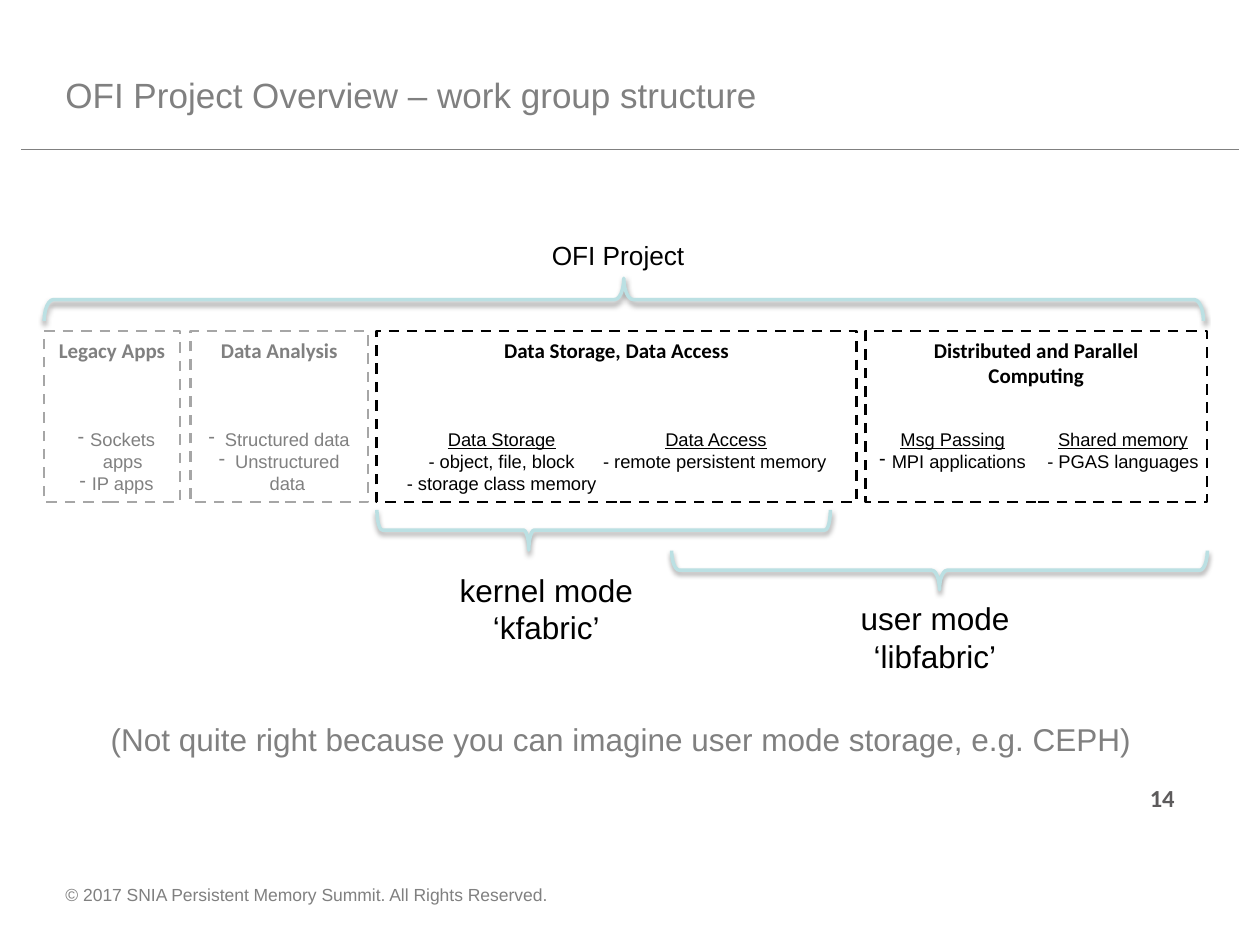
import pptx
import pptx.dml.color
import pptx.enum.dml
import pptx.enum.shapes
import pptx.enum.text
import pptx.oxml
import pptx.oxml.ns
import pptx.util
from lxml import etree

Cm = pptx.util.Cm
Pt = pptx.util.Pt
SHAPE = pptx.enum.shapes.MSO_SHAPE
ANCHOR = pptx.enum.text.MSO_ANCHOR
ALIGN = pptx.enum.text.PP_ALIGN
L, C, R = ALIGN.LEFT, ALIGN.CENTER, ALIGN.RIGHT

COLORS = {"black": "000000", "gray": "808080", "light": "A6A6A6",
          "brace": "BBE0E3", "number": "5D5B5C"}
BOX_TOP, BOX_H = 6.67, 3.45
LIST_TOP = 8.51

# left, width, title lines, text colour, border colour
GROUPS = [
    (0.89, 2.74, ["Legacy Apps"], "gray", "light"),
    (3.84, 3.58, ["Data Analysis"], "gray", "light"),
    (7.59, 9.68, ["Data Storage, Data Access"], "black", "black"),
    (17.45, 6.88, ["Distributed and Parallel", "Computing"], "black", "black"),
]
# left, width, height, colour, heading, items, item alignment, dash indent
# (without an indent the dash is typed in the text)
LISTS = [
    (0.89, 2.92, 1.6, "gray", None, ["Sockets apps", "IP apps"], C, 0.25),
    (3.84, 3.58, 2.06, "gray", None,
     ["Structured data", "Unstructured data"], C, 0.33),
    (7.59, 5.05, 1.6, "black", "Data Storage",
     ["- object, file, block", "- storage class memory"], C, None),
    (11.91, 5.05, 1.14, "black", "Data Access",
     ["- remote persistent memory"], L, None),
    (17.45, 3.51, 1.14, "black", "Msg Passing", ["MPI applications"], C, 0.25),
    (20.75, 3.78, 1.14, "black", "Shared memory",
     ["- PGAS languages"], C, None),
]
# left, top, length, depth, rotation, curve, position of the tip
BRACES = [
    (0.89, 5.61, 23.37, 0.86, 90, 0.218, 0.5),
    (7.6, 10.28, 9.14, 0.81, 270, 0.134, 0.335),
    (13.54, 11.1, 10.8, 0.79, 270, 0.197, 0.5),
]
# left, top, width, height, lines with alignment, size, colour, wrap
LABELS = [
    (10.85, 4.7, 3.2, 0.89, [("OFI Project", R)], 15, "black", False),
    (8.97, 11.38, 4.04, 1.8,
     [("kernel mode", R), ("‘kfabric’", C)], 18, "black", False),
    (17.07, 11.96, 3.53, 1.8,
     [("user mode", R), ("‘libfabric’", C)], 18, "black", False),
    (1.98, 14.4, 21.46, 1.02,
     [("(Not quite right because you can imagine user mode storage, "
       "e.g. CEPH)", L)], 18, "gray", False),
    (1.07, 17.7, 20.52, 0.99,
     [("© 2017 SNIA Persistent Memory Summit. All Rights Reserved.", L)],
     10, "gray", True),
]


def rgb(name):
    return pptx.dml.color.RGBColor.from_string(COLORS[name])


def add_paragraph(tf, text, size, color, align=L, font="Arial", bold=False,
                  underline=False, dash_indent=None):
    """Fill the empty first paragraph of the frame, or append one."""
    p = tf.paragraphs[0]
    if p.runs:
        p = tf.add_paragraph()
    p.alignment = align
    if dash_indent:
        pPr = p._p.get_or_add_pPr()
        pPr.set("marL", str(Cm(dash_indent)))
        pPr.set("indent", str(-Cm(dash_indent)))
        etree.SubElement(pPr, pptx.oxml.ns.qn("a:buChar")).set("char", "-")
    r = p.add_run()
    r.text = text
    r.font.name = font
    r.font.size = Pt(size)
    r.font.bold = bold
    r.font.underline = underline
    r.font.color.rgb = rgb(color)


def add_text_frame(s, left, top, width, height, wrap=True, anchor=ANCHOR.TOP):
    tf = s.shapes.add_textbox(Cm(left), Cm(top), Cm(width), Cm(height)).text_frame
    tf.word_wrap = wrap
    tf.vertical_anchor = anchor
    return tf


def add_label(s, left, top, width, height, lines, size, color, wrap):
    tf = add_text_frame(s, left, top, width, height, wrap)
    for text, align in lines:
        add_paragraph(tf, text, size, color, align)


def add_group(s, left, width, lines, color, border):
    sp = s.shapes.add_shape(SHAPE.RECTANGLE, Cm(left), Cm(BOX_TOP),
                            Cm(width), Cm(BOX_H))
    sp.shadow.inherit = False
    sp.fill.background()
    sp.line.color.rgb = rgb(border)
    sp.line.width = Pt(1.5)
    sp.line.dash_style = pptx.enum.dml.MSO_LINE.DASH
    tf = sp.text_frame
    tf.word_wrap = True
    tf.vertical_anchor = ANCHOR.TOP
    for text in lines:
        add_paragraph(tf, text, 12, color, C, "Calibri", bold=True)


def add_list(s, left, width, height, color, heading, items, align, indent):
    tf = add_text_frame(s, left, LIST_TOP, width, height)
    if heading:
        add_paragraph(tf, heading, 10.5, color, C, underline=True)
    for item in items:
        add_paragraph(tf, item, 10.5, color, align, dash_indent=indent)


def add_brace(s, left, top, length, depth, rotation, curve, tip):
    """Draw a horizontal brace; left and top give its place as it shows."""
    shift = (length - depth) / 2
    sp = s.shapes.add_shape(SHAPE.LEFT_BRACE, Cm(left + shift), Cm(top - shift),
                            Cm(depth), Cm(length))
    sp.rotation = rotation
    sp.adjustments[0] = curve
    sp.adjustments[1] = tip
    sp.fill.background()
    sp.line.color.rgb = rgb("brace")
    sp.line.width = Pt(2)
    sp._element.spPr.append(pptx.oxml.parse_xml(
        f'<a:effectLst {pptx.oxml.ns.nsdecls("a")}>'
        f'<a:outerShdw blurRad="{Pt(3.1)}" dist="{Pt(1.6)}" dir="5400000" '
        f'rotWithShape="0"><a:srgbClr val="{COLORS["black"]}">'
        '<a:alpha val="38000"/></a:srgbClr></a:outerShdw></a:effectLst>'))


def add_rule(s):
    line = s.shapes.add_connector(pptx.enum.shapes.MSO_CONNECTOR.STRAIGHT,
                                  Cm(24.97), Cm(3.02), Cm(0.43), Cm(3.02))
    line.line.color.rgb = rgb("gray")
    line.line.width = Pt(0.75)
    etree.SubElement(line._element.spPr, pptx.oxml.ns.qn("a:effectLst"))


def main():
    prs = pptx.Presentation()
    prs.slide_width, prs.slide_height = Cm(25.4), Cm(19.05)
    s = prs.slides.add_slide(prs.slide_layouts[6])
    add_rule(s)
    title = add_text_frame(s, 1.07, 0.64, 14.81, 2.54, anchor=ANCHOR.MIDDLE)
    add_paragraph(title, "OFI Project Overview – work group structure", 20, "gray")
    for group in GROUPS:
        add_group(s, *group)
    for entry in LISTS:
        add_list(s, *entry)
    for brace in BRACES:
        add_brace(s, *brace)
    for label in LABELS:
        add_label(s, *label)
    number = add_text_frame(s, 15.88, 15.67, 8.05, 0.76)
    add_paragraph(number, "14", 14, "number", R, "Calibri", bold=True)
    prs.save("out.pptx")


if __name__ == "__main__":
    main()
